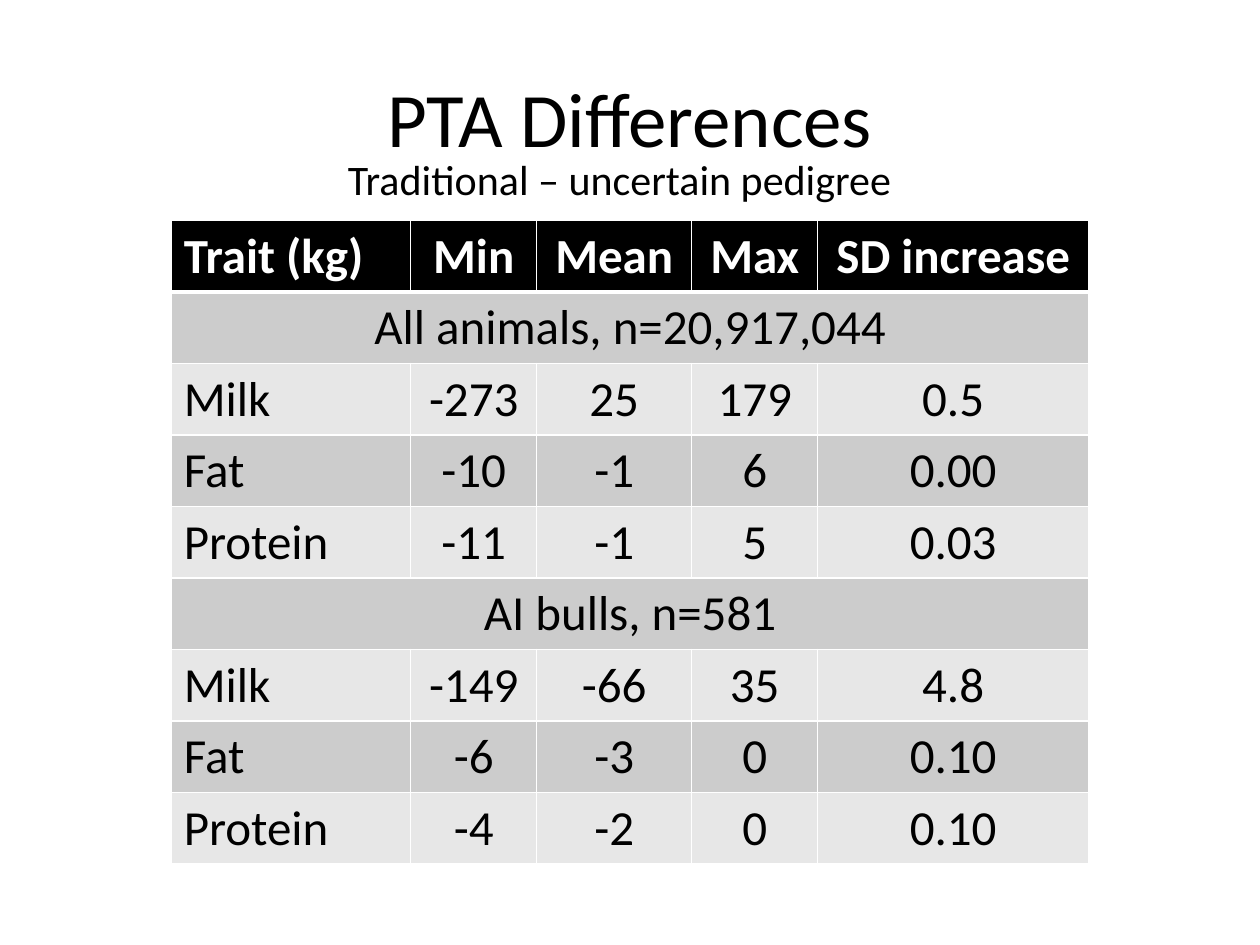
from lxml import etree
from pptx import Presentation
from pptx.dml.color import RGBColor
from pptx.enum import text
from pptx.oxml import ns
from pptx.util import Pt

BLACK = RGBColor(0x00, 0x00, 0x00)
WHITE = RGBColor(0xFF, 0xFF, 0xFF)
DARK_BAND = RGBColor(0xCC, 0xCC, 0xCC)
LIGHT_BAND = RGBColor(0xE7, 0xE7, 0xE7)
FONT = "Calibri"

COLUMN_WIDTHS = [136.8, 72, 88.56, 72, 154.8]
ROW_HEIGHT = 40.8
ROWS = [
    ["Trait (kg)", "Min", "Mean", "Max", "SD increase"],
    ["All animals, n=20,917,044"],
    ["Milk", "-273", "25", "179", "0.5"],
    ["Fat", "-10", "-1", "6", "0.00"],
    ["Protein", "-11", "-1", "5", "0.03"],
    ["AI bulls, n=581"],
    ["Milk", "-149", "-66", "35", "4.8"],
    ["Fat", "-6", "-3", "0", "0.10"],
    ["Protein", "-4", "-2", "0", "0.10"],
]


def write_text(frame, wording, size, color=BLACK, bold=False, centered=True):
    frame.text = wording
    para = frame.paragraphs[0]
    para.alignment = text.PP_ALIGN.CENTER if centered else text.PP_ALIGN.LEFT
    for span in para.runs:
        span.font.name = FONT
        span.font.size = Pt(size)
        span.font.bold = bold
        span.font.color.rgb = color


def add_heading(page, wording, left, top, width, height, size):
    box = page.shapes.add_textbox(Pt(left), Pt(top), Pt(width), Pt(height))
    frame = box.text_frame
    frame.word_wrap = True
    frame.vertical_anchor = text.MSO_ANCHOR.MIDDLE
    write_text(frame, wording, size)


def set_borders(cell, top=1, bottom=1):
    properties = cell._tc.get_or_add_tcPr()
    widths = {"lnL": 1, "lnR": 1, "lnT": top, "lnB": bottom}
    for position, (edge, width) in enumerate(widths.items()):
        line = etree.Element(ns.qn(f"a:{edge}"), w=str(Pt(width)))
        fill = etree.SubElement(line, ns.qn("a:solidFill"))
        etree.SubElement(fill, ns.qn("a:srgbClr"), val=str(WHITE))
        properties.insert(position, line)


def fill_row(table, number, values):
    header = number == 0
    band = BLACK if header else DARK_BAND if number % 2 else LIGHT_BAND
    section = len(values) == 1
    last = len(COLUMN_WIDTHS) - 1
    for column in range(last + 1):
        cell = table.cell(number, column)
        cell.fill.solid()
        cell.fill.fore_color.rgb = band
        set_borders(cell, top=3 if number == 1 else 1, bottom=3 if header else 1)
    if section:
        table.cell(number, 0).merge(table.cell(number, last))
    for column, value in enumerate(values):
        write_text(
            table.cell(number, column).text_frame,
            value,
            28,
            color=WHITE if header else BLACK,
            bold=header,
            centered=section or column > 0,
        )


def add_trait_table(page, left, top):
    table = page.shapes.add_table(
        len(ROWS), len(COLUMN_WIDTHS), Pt(left), Pt(top),
        Pt(sum(COLUMN_WIDTHS)), Pt(ROW_HEIGHT * len(ROWS)),
    ).table
    for column, width in zip(table.columns, COLUMN_WIDTHS):
        column.width = Pt(width)
    for number, values in enumerate(ROWS):
        table.rows[number].height = Pt(ROW_HEIGHT)
        fill_row(table, number, values)


def main():
    deck = Presentation()
    deck.slide_width, deck.slide_height = Pt(720), Pt(540)
    page = deck.slides.add_slide(deck.slide_layouts[6])
    add_heading(page, "PTA Differences", 36, 21.6, 648, 90, 44)
    add_trait_table(page, 97.92, 126)
    add_heading(page, "Traditional – uncertain pedigree ", 185.76, 84.24, 342, 36, 24)
    deck.save("out.pptx")


if __name__ == "__main__":
    main()
